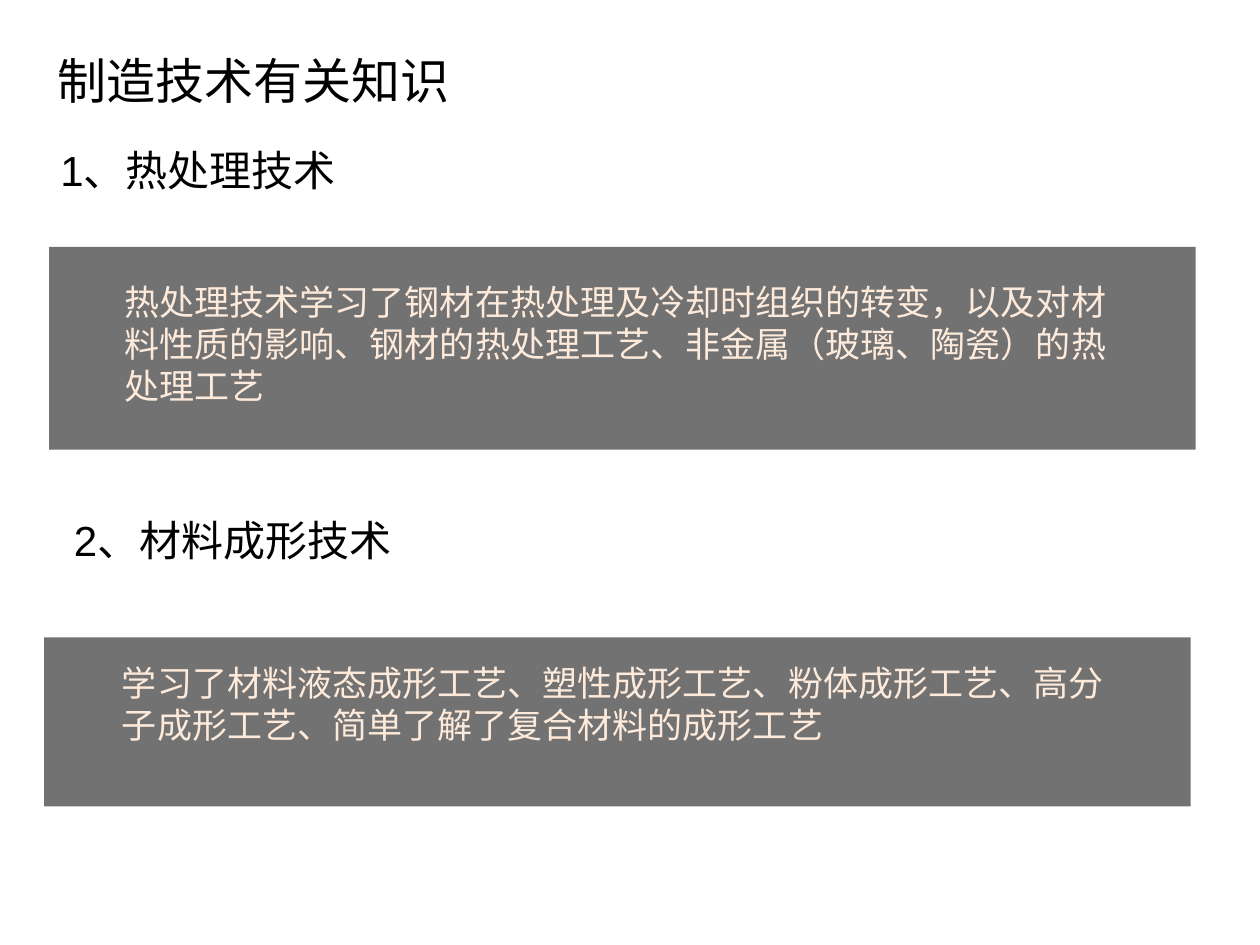
from lxml import etree
from pptx import Presentation
from pptx.dml.color import RGBColor
from pptx.enum.shapes import MSO_SHAPE
from pptx.enum.text import MSO_ANCHOR, PP_ALIGN
from pptx.oxml.ns import qn
from pptx.util import Inches, Pt

WIDTH, HEIGHT = 10, 7.5
BLACK = RGBColor(0x00, 0x00, 0x00)
GRAY = RGBColor(0x33, 0x33, 0x33)
CREAM = RGBColor(0xFD, 0xEA, 0xDA)
RECTANGLE = MSO_SHAPE.RECTANGLE
LEFT, CENTER = PP_ALIGN.LEFT, PP_ALIGN.CENTER
TOP, MIDDLE = MSO_ANCHOR.TOP, MSO_ANCHOR.MIDDLE
SANS, LATIN, BODY = "Noto Sans CJK SC", "Arial", "Calibri"
PANEL_OPACITY = 69

HEAT_TEXT = (
    "热处理技术学习了钢材在热处理及冷却时组织的转变，以及对材料性质的影响、"
    "钢材的热处理工艺、非金属（玻璃、陶瓷）的热处理工艺"
)
FORMING_TEXT = (
    "学习了材料液态成形工艺、塑性成形工艺、粉体成形工艺、"
    "高分子成形工艺、简单了解了复合材料的成形工艺"
)


def add_text(page, box, spans, size, color=BLACK, align=LEFT, anchor=TOP, wrap=True):
    frame = page.shapes.add_textbox(*map(Inches, box)).text_frame
    frame.word_wrap = wrap
    frame.vertical_anchor = anchor
    para = frame.paragraphs[0]
    para.alignment = align
    for text, font in spans:
        span = para.add_run()
        span.text = text
        span.font.name = font
        span.font.size = Pt(size)
        span.font.color.rgb = color


def add_heading(page, box, number, text, **layout):
    add_text(page, box, [(number, LATIN), (f"、{text}", BODY)], 24, **layout)


def add_panel(page, box, text, font, inset):
    left, top, width, height = box
    panel = page.shapes.add_shape(RECTANGLE, *map(Inches, box))
    panel.shadow.inherit = False
    panel.line.fill.background()
    panel.fill.solid()
    panel.fill.fore_color.rgb = GRAY
    color = panel.fill._xPr.find(f".//{qn('a:srgbClr')}")
    etree.SubElement(color, qn("a:alpha"), val=str(PANEL_OPACITY * 1000))
    across, down = inset
    text_box = (left + across, top + down, 0.82 * WIDTH, height - 2 * down)
    add_text(page, text_box, [(text, font)], 20, color=CREAM)


def main():
    deck = Presentation()
    deck.slide_width, deck.slide_height = Inches(WIDTH), Inches(HEIGHT)
    page = deck.slides.add_slide(deck.slide_layouts[6])
    add_text(page, (0.36, 0.35, 3.34, 0.57), [("制造技术有关知识", SANS)], 28, wrap=False)
    add_heading(page, (0.38, 1.1, 8.25, 0.5), "1", "热处理技术")
    add_panel(page, (0.39, 1.96, 9.1, 1.61), HEAT_TEXT, LATIN, (0.5, 0.22))
    add_heading(page, (0.39, 3.87, 2.91, 0.83), "2", "材料成形技术", align=CENTER, anchor=MIDDLE)
    add_panel(page, (0.35, 5.06, 9.1, 1.34), FORMING_TEXT, SANS, (0.52, 0.14))
    deck.save("out.pptx")


if __name__ == "__main__":
    main()
